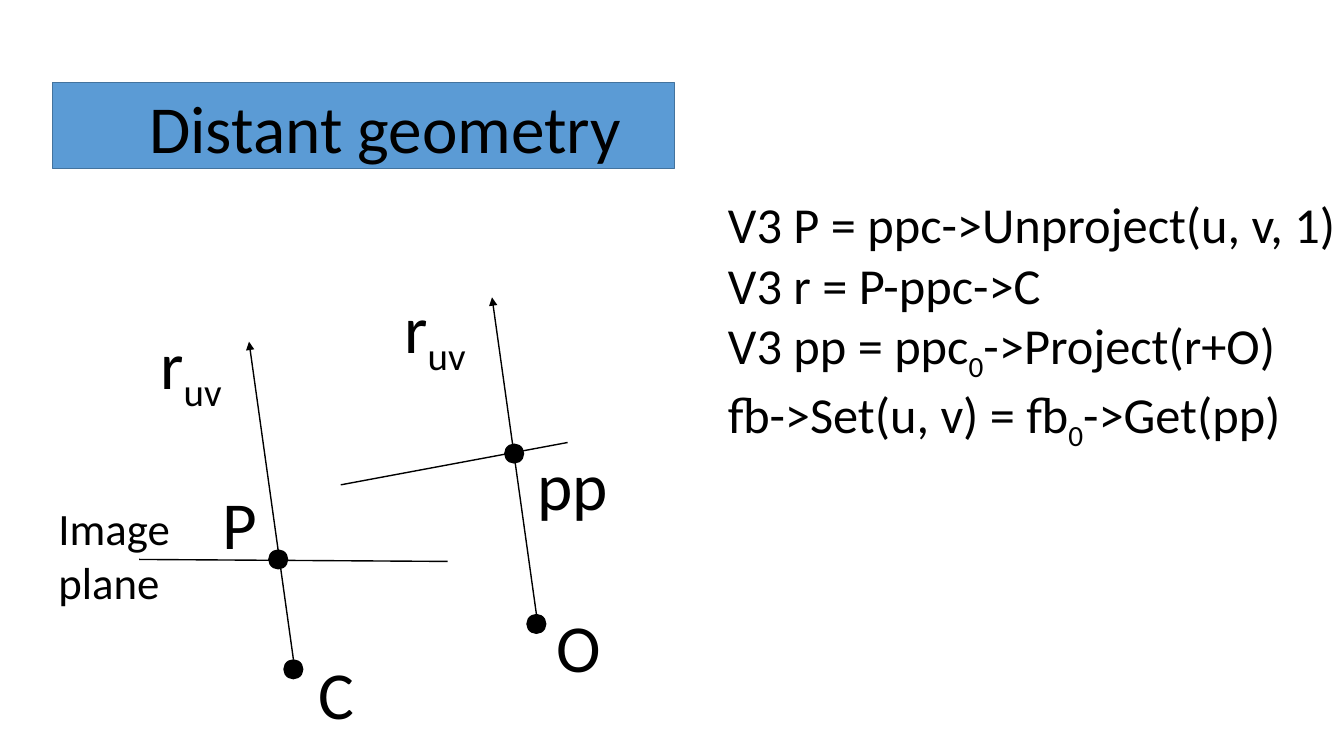
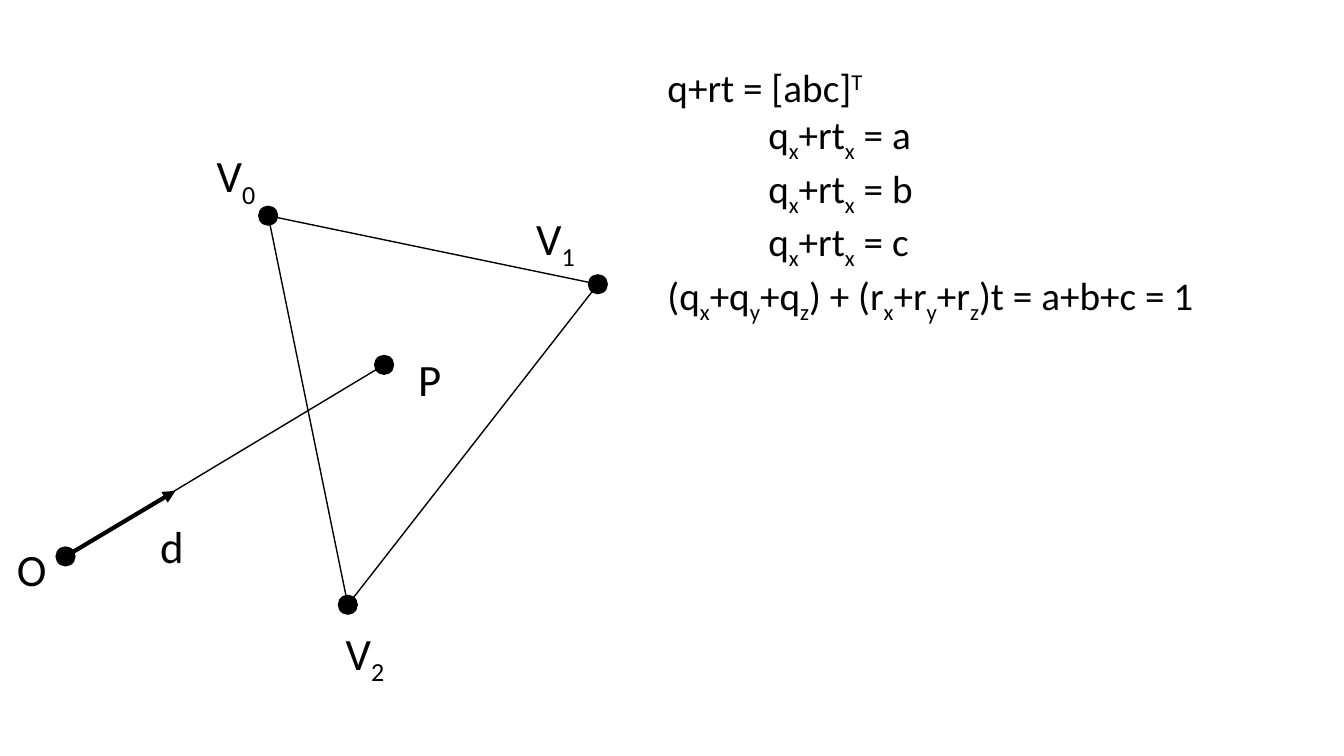
"""Build two geometry slides: a distant-geometry lookup and a ray-triangle hit."""
import dataclasses
import typing

import pptx
import pptx.dml.color
import pptx.enum.shapes
import pptx.enum.text
import pptx.oxml.ns
import pptx.slide
import pptx.util
from pptx.util import Inches

Point = tuple[float, float]
Lines = tuple[str, ...]
qn = pptx.oxml.ns.qn


@dataclasses.dataclass(frozen=True)
class Theme:
    font: str = "Calibri"
    ink: str = "000000"
    band: str = "5B9BD5"
    edge: str = "43739E"
    big: int = 48
    code: int = 36
    mid: int = 32
    math: int = 28
    thin: float = 1
    thick: float = 3
    dot: float = 0.2


@dataclasses.dataclass(frozen=True)
class Box:
    left: float
    top: float
    width: float
    height: float


@dataclasses.dataclass(frozen=True)
class Label:
    box: Box
    lines: Lines
    size: int


@dataclasses.dataclass(frozen=True)
class Line:
    start: Point
    end: Point
    arrow: bool = False
    width: float = 1


THEME = Theme()


def color(code: str) -> pptx.dml.color.RGBColor:
    return pptx.dml.color.RGBColor.from_string(code)


def place(shape: typing.Any, box: Box) -> None:
    shape.left, shape.top = Inches(box.left), Inches(box.top)
    shape.width, shape.height = Inches(box.width), Inches(box.height)


def write(frame: typing.Any, lines: Lines, size: int) -> None:
    """Write lines in which | opens and closes a subscript, or a superscript after ^."""
    for row, line in enumerate(lines):
        para = frame.paragraphs[0] if row == 0 else frame.add_paragraph()
        para.alignment = pptx.enum.text.PP_ALIGN.LEFT
        para.space_before = pptx.util.Pt(0)
        for spot, part in enumerate(line.split("|")):
            if not part:
                continue
            run = para.add_run()
            run.text = part.lstrip("^")
            run.font.name = THEME.font
            run.font.size = pptx.util.Pt(size)
            run.font.color.rgb = color(THEME.ink)
            if spot % 2:
                base = "30000" if part.startswith("^") else "-25000"
                run.font._element.set("baseline", base)


def draw_label(slide: pptx.slide.Slide, label: Label) -> None:
    shape = slide.shapes.add_textbox(0, 0, 0, 0)
    place(shape, label.box)
    frame = shape.text_frame
    frame.word_wrap = False
    frame.auto_size = pptx.enum.text.MSO_AUTO_SIZE.SHAPE_TO_FIT_TEXT
    write(frame, label.lines, label.size)


def draw_dot(slide: pptx.slide.Slide, mid: Point) -> typing.Any:
    half = THEME.dot / 2
    dot = slide.shapes.add_shape(
        pptx.enum.shapes.MSO_SHAPE.OVAL,
        Inches(mid[0] - half), Inches(mid[1] - half),
        Inches(THEME.dot), Inches(THEME.dot))
    dot.shadow.inherit = False
    dot.fill.solid()
    dot.fill.fore_color.rgb = color(THEME.ink)
    dot.line.fill.background()
    return dot


def draw_line(slide: pptx.slide.Slide, line: Line) -> typing.Any:
    wire = slide.shapes.add_connector(
        pptx.enum.shapes.MSO_CONNECTOR.STRAIGHT,
        *(Inches(n) for n in line.start + line.end))
    wire.line.color.rgb = color(THEME.ink)
    wire.line.width = pptx.util.Pt(line.width)
    props = wire.element.find(qn("p:spPr"))
    if line.arrow:
        head = props.find(qn("a:ln")).makeelement(qn("a:tailEnd"), {"type": "triangle"})
        props.find(qn("a:ln")).append(head)
    props.append(props.makeelement(qn("a:effectLst"), {}))
    return wire


def draw_title(slide: pptx.slide.Slide, text: str, box: Box, back: Box) -> None:
    title = slide.shapes.title
    place(title, box)
    title.text_frame.word_wrap = False
    title.text_frame.auto_size = pptx.enum.text.MSO_AUTO_SIZE.NONE
    write(title.text_frame, (text,), THEME.big)
    band = slide.shapes.add_shape(pptx.enum.shapes.MSO_SHAPE.RECTANGLE, 0, 0, 0, 0)
    place(band, back)
    band.shadow.inherit = False
    band.fill.solid()
    band.fill.fore_color.rgb = color(THEME.band)
    band.line.color.rgb = color(THEME.edge)
    band.line.width = pptx.util.Pt(THEME.thin)
    title.element.addprevious(band.element)


def draw_body(slide: pptx.slide.Slide, label: Label, deep: range = range(0)) -> None:
    """Fill the body placeholder without bullets, the deep rows set in by an inch."""
    body = slide.placeholders[1]
    place(body, label.box)
    frame = body.text_frame
    frame.word_wrap = True
    frame.auto_size = pptx.enum.text.MSO_AUTO_SIZE.NONE
    frame.margin_right = 0
    write(frame, label.lines, label.size)
    for row, para in enumerate(frame.paragraphs):
        props = para._p.get_or_add_pPr()
        props.set("marL", str(Inches(1 if row in deep else 0)))
        props.set("indent", "0")
        props.append(props.makeelement(qn("a:buNone"), {}))


def draw_distant(slide: pptx.slide.Slide) -> None:
    draw_title(slide, "Distant geometry",
               Box(1.38, 0.8, 4.93, 0.91), Box(0.52, 0.82, 6.17, 0.85))
    draw_body(slide, Label(Box(7.12, 1.87, 6.2, 2.52), (
        "V3 P = ppc->Unproject(u, v, 1)",
        "V3 r = P-ppc->C",
        "V3 pp = ppc|0|->Project(r+O)",
        "fb->Set(u, v) = fb|0|->Get(pp)"), THEME.code))
    for plane in (Line((1.38, 5.55), (4.44, 5.57)), Line((3.38, 4.81), (5.63, 4.39))):
        draw_line(slide, plane)
    for eye, hit, tip in (((2.91, 6.64), (2.76, 5.55), (2.47, 3.39)),
                          ((5.32, 6.19), (5.1, 4.5), (4.88, 2.95))):
        ray = draw_line(slide, Line(eye, tip, arrow=True))
        ray.begin_connect(draw_dot(slide, eye), 0)
        draw_dot(slide, hit)
    for text, left, top, width in (
            ("C", 3.06, 6.42, 0.56), ("O", 5.42, 5.96, 0.65),
            ("r|uv", 1.49, 3.15, 0.88), ("r|uv", 3.91, 2.79, 0.88),
            ("pp", 5.23, 4.35, 0.91), ("P", 2.11, 4.74, 0.55)):
        draw_label(slide, Label(Box(left, top, width, 0.91), (text,), THEME.big))
    draw_label(slide, Label(Box(0.48, 4.92, 1.32, 1.18), ("Image", "plane"), THEME.mid))


def draw_hit(slide: pptx.slide.Slide) -> None:
    title = slide.shapes.title.element
    title.getparent().remove(title)
    rows = tuple(f"q|x|+rt|x| = {name}" for name in "abc")
    draw_body(slide, Label(Box(6.52, 0.58, 5.7, 2.8), (
        "q+rt = [abc]|^T", *rows,
        "(q|x|+q|y|+q|z|) + (r|x|+r|y|+r|z|)t = a+b+c = 1"), THEME.math), range(1, 4))
    eye, hit = (0.65, 5.52), (3.81, 3.62)
    tri = ((2.66, 2.14), (5.93, 2.82), (3.45, 6.0))
    for start, end in ((eye, hit), *zip(tri, tri[1:] + tri[:1])):
        draw_line(slide, Line(start, end))
    draw_line(slide, Line(eye, (1.74, 4.87), True, THEME.thick))
    for mid in (eye, hit, *tri):
        draw_dot(slide, mid)
    for text, left, top, width in (
            ("O", 0.07, 5.33, 0.5), ("P", 4.05, 3.44, 0.43), ("d", 1.49, 5.1, 0.44),
            ("V|0", 2.05, 1.42, 0.61), ("V|1", 5.22, 2.04, 0.61),
            ("V|2", 3.33, 6.16, 0.61)):
        draw_label(slide, Label(Box(left, top, width, 0.64), (text,), THEME.mid))


def main() -> None:
    deck = pptx.Presentation()
    deck.slide_width, deck.slide_height = Inches(13.33), Inches(7.5)
    for draw in (draw_distant, draw_hit):
        draw(deck.slides.add_slide(deck.slide_layouts[1]))
    deck.save("out.pptx")


if __name__ == "__main__":
    main()
